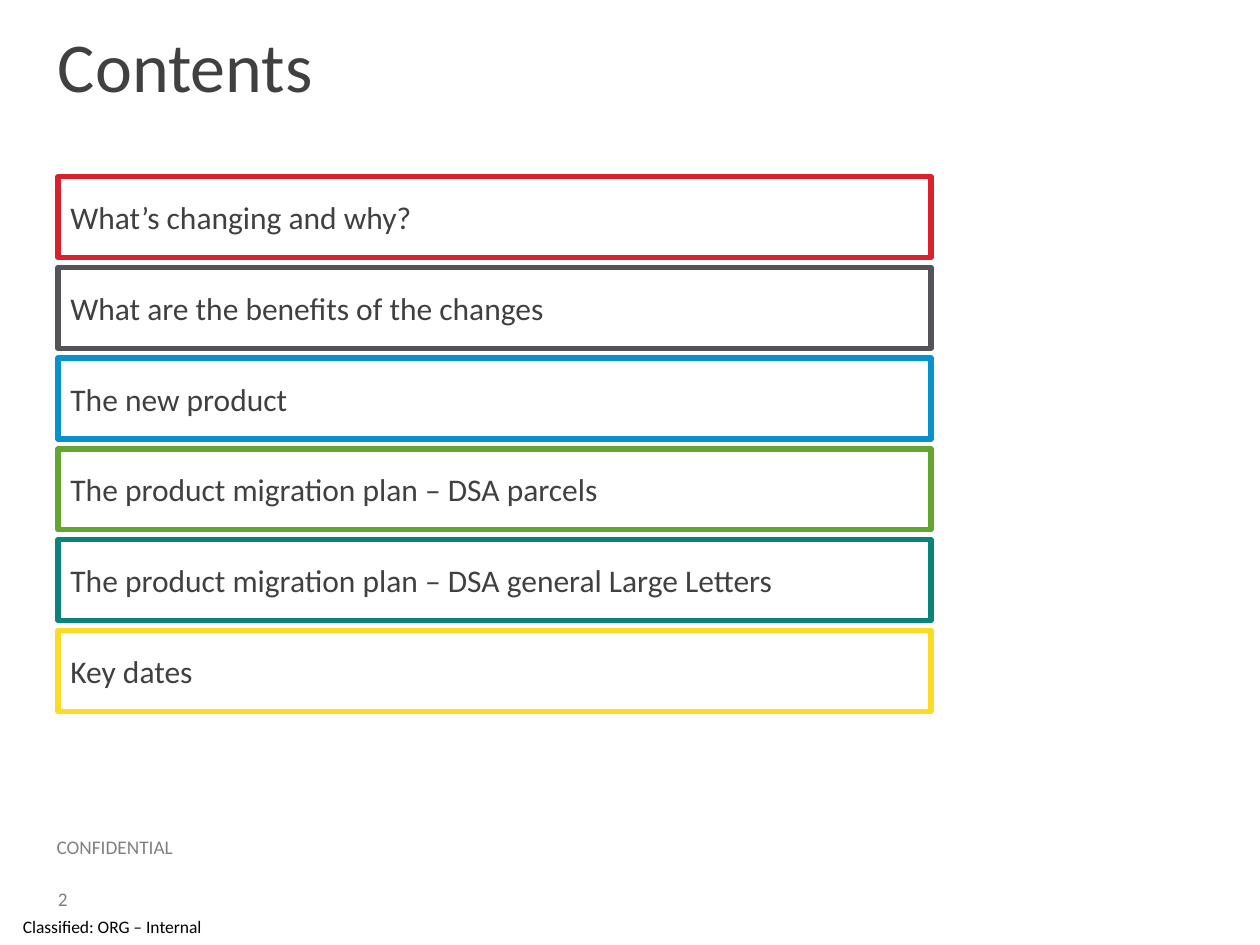
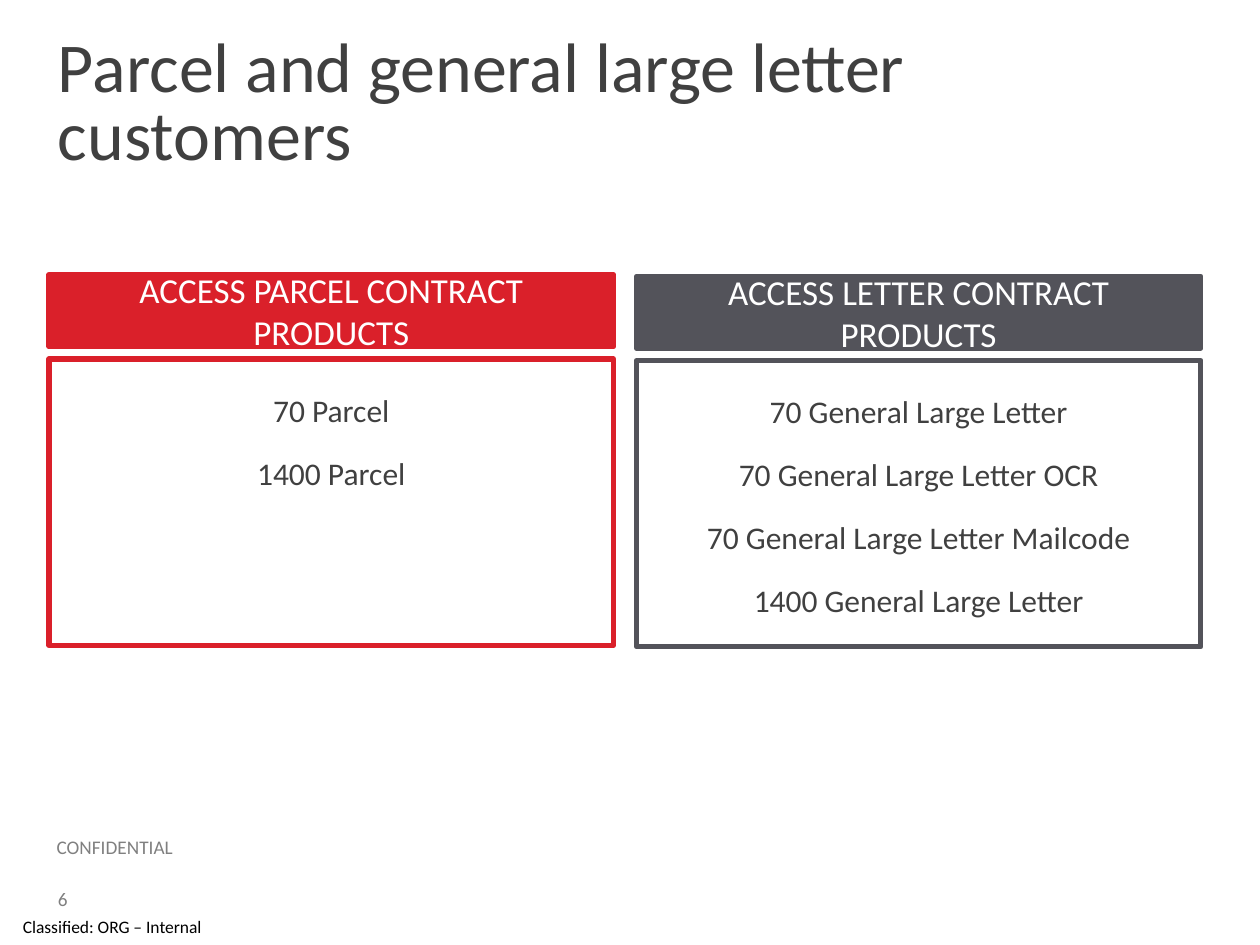
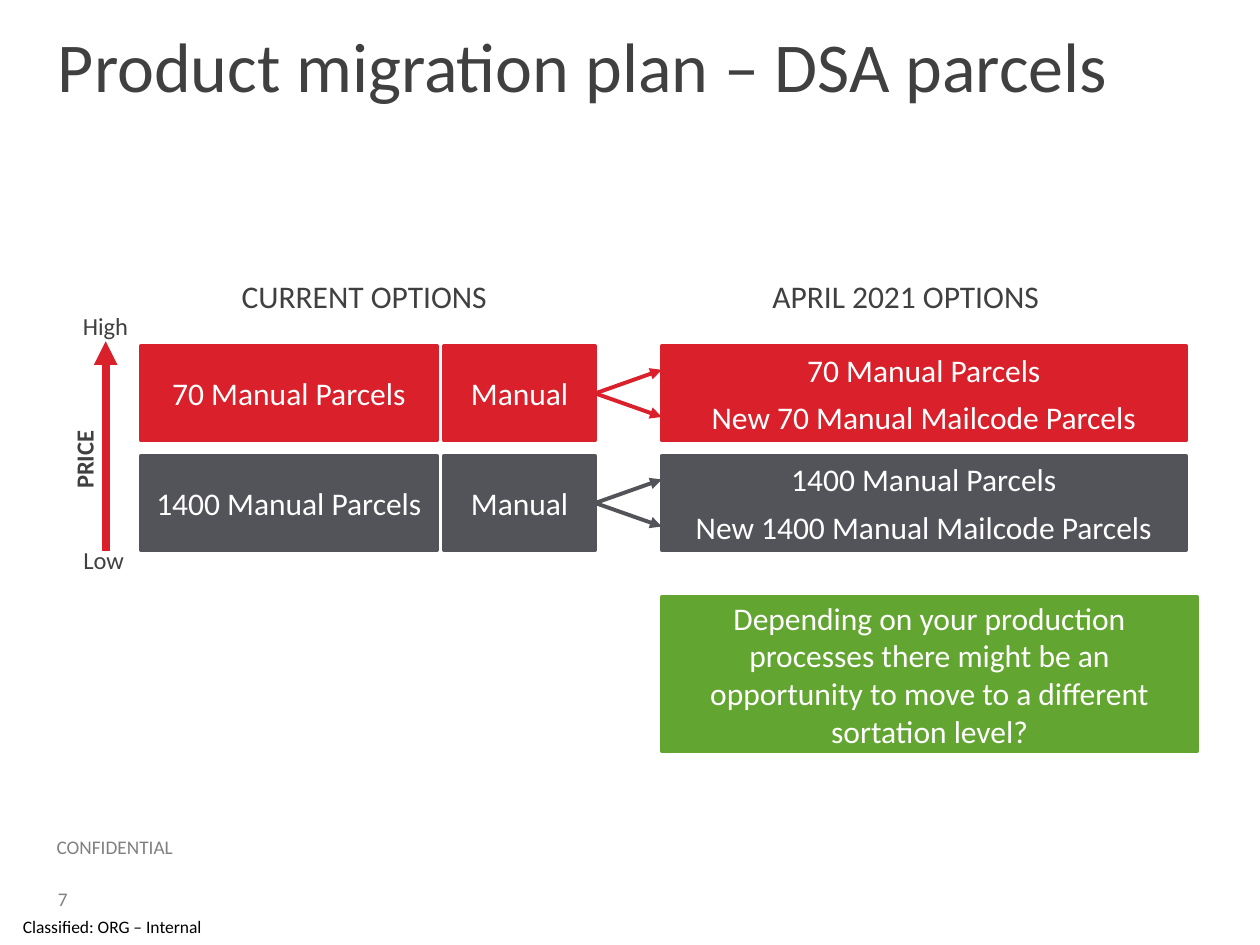
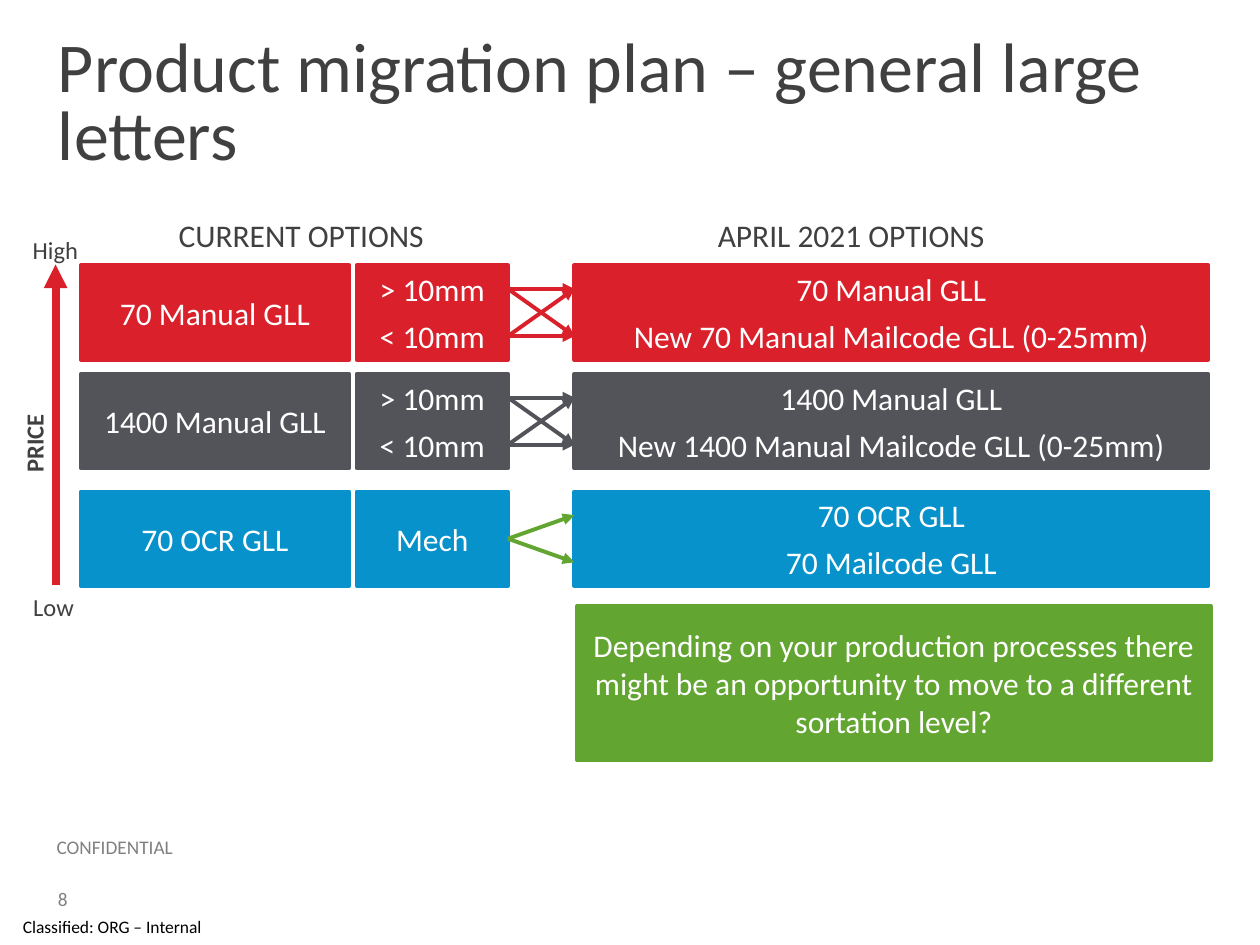
from lxml import etree
from pptx import Presentation
from pptx.dml.color import RGBColor
from pptx.enum.shapes import MSO_CONNECTOR, MSO_SHAPE
from pptx.enum.text import MSO_ANCHOR, PP_ALIGN
from pptx.oxml.ns import qn
from pptx.util import Cm, Pt

STRAIGHT = MSO_CONNECTOR.STRAIGHT
RECTANGLE = MSO_SHAPE.RECTANGLE
TOP, MIDDLE = MSO_ANCHOR.TOP, MSO_ANCHOR.MIDDLE
LEFT, CENTER = PP_ALIGN.LEFT, PP_ALIGN.CENTER

RED = RGBColor(0xDA, 0x20, 0x2A)
SLATE = RGBColor(0x53, 0x53, 0x5A)
BLUE = RGBColor(0x08, 0x92, 0xCB)
GREEN = RGBColor(0x62, 0xA5, 0x31)
TEAL = RGBColor(0x08, 0x85, 0x78)
YELLOW = RGBColor(0xFD, 0xDA, 0x24)
INK = RGBColor(0x40, 0x40, 0x40)
GREY = RGBColor(0x80, 0x80, 0x80)
BLACK = RGBColor(0, 0, 0)
WHITE = RGBColor(0xFF, 0xFF, 0xFF)

FONT = "Calibri"
SIDE_INSET, END_INSET = 0.25, 0.13
ROW_HEIGHT = 1.9
RIGHT_SIDE, LEFT_SIDE = 3, 1
QUESTION = (
    "Depending on your production processes there might be an "
    "opportunity to move to a different sortation level?"
)


class Deck:
    def __init__(self):
        self.deck = Presentation()
        self.deck.slide_width, self.deck.slide_height = Cm(25.4), Cm(19.05)
        self.page = None

    def add_page(self, title, number):
        self.page = self.deck.slides.add_slide(self.deck.slide_layouts[6])
        self.add_text("CONFIDENTIAL", 1.14, 16.84, 8.59, 0.48, size=11, color=GREY, inset=False)
        self.add_text("Classified: ORG – Internal", 0, 18.31, 4.52, 0.74, size=10,
                      color=BLACK, inset=False, align=CENTER, anchor=MIDDLE)
        self.add_text(title, 1.17, 0.79, 23.09, 2.74, size=40, inset=False, spacing=0.8)
        self.add_text(str(number), 1.17, 17.88, 2.59, 0.66, size=11, color=GREY, inset=False)

    def set_text(self, box, lines, size, color, align=LEFT, anchor=TOP, bold=False,
                 spacing=None, gap=0, inset=True, top_inset=END_INSET):
        frame = box.text_frame
        frame.word_wrap = True
        frame.vertical_anchor = anchor
        frame.margin_left = frame.margin_right = Cm(SIDE_INSET if inset else 0)
        frame.margin_top = Cm(top_inset if inset else 0)
        frame.margin_bottom = Cm(END_INSET if inset else 0)
        for index, line in enumerate(lines):
            para = frame.add_paragraph() if index else frame.paragraphs[0]
            para.alignment = align
            if spacing:
                para.line_spacing = spacing
            if index and gap:
                para.space_before = Pt(gap)
            span = para.add_run()
            span.text = line
            span.font.name = FONT
            span.font.size = Pt(size)
            span.font.bold = bold
            span.font.color.rgb = color

    def add_text(self, text, left, top, width, height, size=18, color=INK, **style):
        box = self.page.shapes.add_textbox(Cm(left), Cm(top), Cm(width), Cm(height))
        self.set_text(box, [text], size, color, **style)
        return box

    def add_box(self, lines, left, top, width, height, color, filled=True,
                weight=2.25, size=18, align=CENTER, anchor=MIDDLE, **style):
        box = self.page.shapes.add_shape(RECTANGLE, Cm(left), Cm(top), Cm(width), Cm(height))
        box.shadow.inherit = False
        box.line.color.rgb = color
        box.line.width = Pt(weight)
        if filled:
            box.fill.solid()
            box.fill.fore_color.rgb = color
        else:
            box.fill.background()
        self.set_text(box, lines, size, WHITE if filled else INK, align, anchor, **style)
        return box

    def add_stack(self, labels, left, top, width, color):
        height = ROW_HEIGHT / len(labels)
        return [self.add_box([label], left, top + index * height, width, height, color)
                for index, label in enumerate(labels)]

    def add_arrow(self, color, weight, start=(0, 0), end=(0, 0)):
        arrow = self.page.shapes.add_connector(STRAIGHT, *map(Cm, start + end))
        arrow.line.color.rgb = color
        arrow.line.width = Pt(weight)
        properties = arrow._element.spPr
        etree.SubElement(properties.find(qn("a:ln")), qn("a:tailEnd"), type="triangle")
        etree.SubElement(properties, qn("a:effectLst"))
        return arrow

    def add_link(self, source, target, color):
        arrow = self.add_arrow(color, 2.25)
        arrow.begin_connect(source, RIGHT_SIDE)
        arrow.end_connect(target, LEFT_SIDE)

    def add_price_axis(self, x, top, bottom, price_top, low_top):
        self.add_arrow(RED, 4.5, (x, bottom), (x, top))
        price = self.add_text("PRICE", x - 1.45, price_top, 2.03, 0.86, size=14, bold=True)
        price.rotation = 270
        self.add_text("High", x - 0.71, top - 0.73, 1.55, 0.86, size=14)
        self.add_text("Low", x - 0.7, low_top, 1.42, 0.86, size=14)

    def add_headings(self, top, current_left, april_left):
        self.add_text("CURRENT OPTIONS", current_left, top, 6.71, 1.02)
        self.add_text("APRIL 2021 OPTIONS", april_left, top, 7.01, 1.02)

    def add_migration(self, columns, rows):
        for top, color, arrow_color, *cells in rows:
            _, sortations, options = [
                self.add_stack(labels, left, top, width, color)
                for labels, (left, width) in zip(cells, columns)
            ]
            for sortation in sortations:
                for option in options:
                    self.add_link(sortation, option, arrow_color)


def contents(deck):
    deck.add_page("Contents", 2)
    topics = [
        ("What’s changing and why?", RED),
        ("What are the benefits of the changes", SLATE),
        ("The new product", BLUE),
        ("The product migration plan – DSA parcels", GREEN),
        ("The product migration plan – DSA general Large Letters", TEAL),
        ("Key dates", YELLOW),
    ]
    for index, (topic, color) in enumerate(topics):
        deck.add_box([topic], 1.17, 3.56 + index * 1.83, 17.6, 1.63, color,
                     filled=False, weight=3, align=LEFT)


def customers(deck):
    deck.add_page("Parcel and general large letter customers", 6)
    contracts = [
        (0.99, 5.54, RED, "ACCESS PARCEL CONTRACT PRODUCTS", ["70 Parcel", "1400 Parcel"]),
        (12.83, 5.57, SLATE, "ACCESS LETTER CONTRACT PRODUCTS",
         ["70 General Large Letter", "70 General Large Letter OCR",
          "70 General Large Letter Mailcode", "1400 General Large Letter"]),
    ]
    for left, top, color, heading, products in contracts:
        deck.add_box([heading], left, top, 11.38, 1.45, color, weight=3, size=20)
        deck.add_box(products, left, top + 1.7, 11.38, 5.77, color, filled=False, weight=3,
                     anchor=TOP, spacing=Pt(18), gap=18, top_inset=0.76)


def parcels(deck):
    deck.add_page("Product migration plan – DSA parcels", 7)
    deck.add_price_axis(2.13, 6.88, 11.1, price_top=8.66, low_top=10.85)
    deck.add_headings(5.46, 4.62, 15.32)
    deck.add_migration([(2.84, 5.97), (8.95, 3.05), (13.34, 10.57)], [
        (6.98, RED, RED, ["70 Manual Parcels"], ["Manual"],
         ["70 Manual Parcels", "New 70 Manual Mailcode Parcels"]),
        (9.19, SLATE, SLATE, ["1400 Manual Parcels"], ["Manual"],
         ["1400 Manual Parcels", "New 1400 Manual Mailcode Parcels"]),
    ])
    deck.add_box([QUESTION], 13.34, 12.04, 10.8, 3.1, GREEN)


def large_letters(deck):
    deck.add_page("Product migration plan – general large letters", 8)
    deck.add_price_axis(1.12, 5.33, 11.79, price_top=8.33, low_top=11.81)
    deck.add_headings(4.22, 3.35, 14.22)
    thicknesses = ["> 10mm", "< 10mm"]
    deck.add_migration([(1.63, 5.41), (7.19, 3.05), (11.58, 12.78)], [
        (5.35, RED, RED, ["70 Manual GLL"], thicknesses,
         ["70 Manual GLL", "New 70 Manual Mailcode GLL (0-25mm)"]),
        (7.54, SLATE, SLATE, ["1400 Manual GLL"], thicknesses,
         ["1400 Manual GLL", "New 1400 Manual Mailcode GLL (0-25mm)"]),
        (9.91, BLUE, GREEN, ["70 OCR GLL"], ["Mech"],
         ["70 OCR GLL", "70 Mailcode GLL"]),
    ])
    deck.add_box([QUESTION], 11.63, 12.22, 12.78, 3.1, GREEN)


def main():
    deck = Deck()
    for build in (contents, customers, parcels, large_letters):
        build(deck)
    deck.deck.save("out.pptx")


if __name__ == "__main__":
    main()
